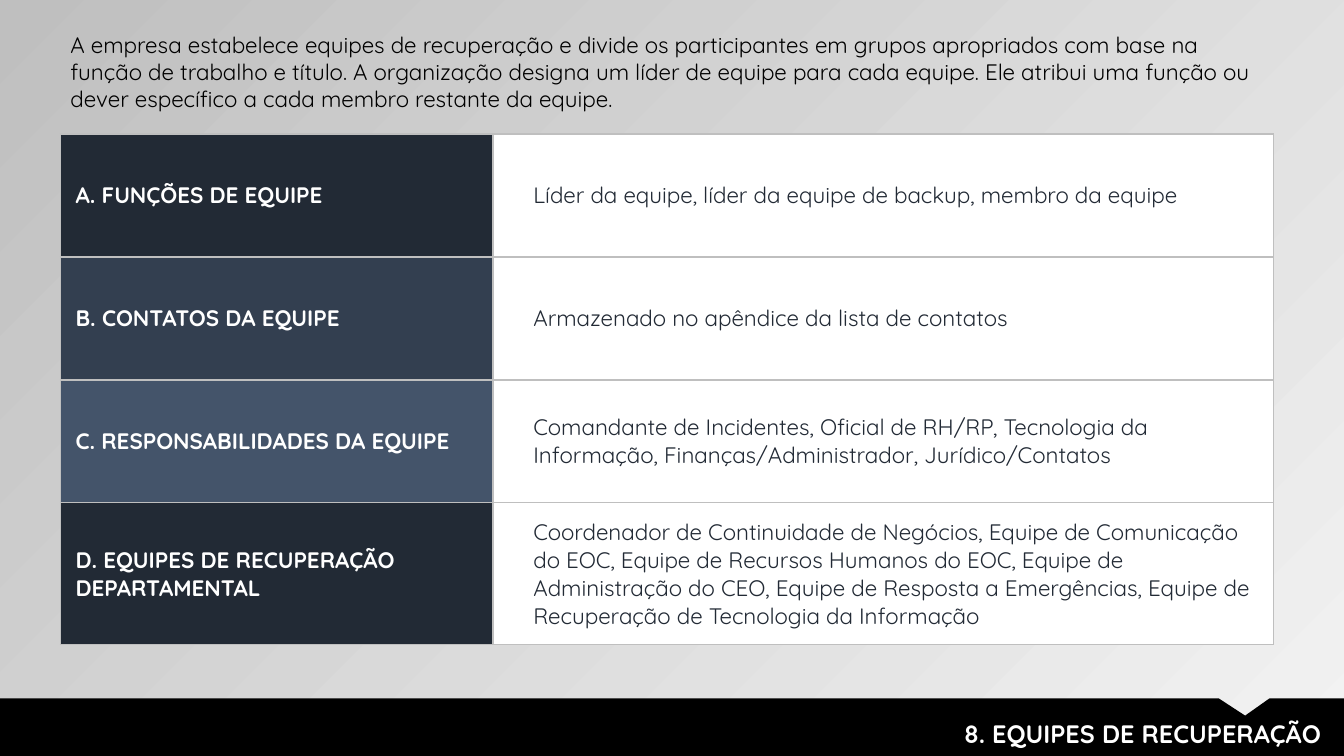
from lxml.etree import SubElement
from pptx import Presentation
from pptx.dml.color import RGBColor
from pptx.enum.text import MSO_ANCHOR, PP_ALIGN
from pptx.oxml.ns import qn
from pptx.util import Inches, Pt

FONT = "Quicksand"
WHITE, BLACK, NAVY, GREY = "FFFFFF", "000000", "222A35", "BFBFBF"
INTRO = (
    "A empresa estabelece equipes de recuperação e divide os participantes em "
    "grupos apropriados com base na função de trabalho e título. A organização "
    "designa um líder de equipe para cada equipe. Ele atribui uma função ou "
    "dever específico a cada membro restante da equipe."
)
TITLE = "8. EQUIPES DE RECUPERAÇÃO"
TEAMS = [
    ("A. FUNÇÕES DE EQUIPE", NAVY,
     "Líder da equipe, líder da equipe de backup, membro da equipe"),
    ("B. CONTATOS DA EQUIPE", "333F50",
     "Armazenado no apêndice da lista de contatos"),
    ("C. RESPONSABILIDADES DA EQUIPE", "44546A",
     "Comandante de Incidentes, Oficial de RH/RP, Tecnologia da Informação, "
     "Finanças/Administrador, Jurídico/Contatos"),
    ("D. EQUIPES DE RECUPERAÇÃO DEPARTAMENTAL", NAVY,
     "Coordenador de Continuidade de Negócios, Equipe de Comunicação do EOC, "
     "Equipe de Recursos Humanos do EOC, Equipe de Administração do CEO, "
     "Equipe de Resposta a Emergências, Equipe de Recuperação de Tecnologia "
     "da Informação"),
]


def color(code):
    return RGBColor.from_string(code)


def set_all(target, values):
    for name, value in values.items():
        setattr(target, name, value)


def write(frame, text, size, code, bold=False, align=PP_ALIGN.LEFT):
    para = frame.paragraphs[0]
    para.alignment = align
    run = para.add_run()
    run.text = text
    set_all(run.font, {"name": FONT, "size": Pt(size), "bold": bold})
    run.font.color.rgb = color(code)


def add_text(slide, box, *args, **kwargs):
    frame = slide.shapes.add_textbox(*map(Inches, box)).text_frame
    frame.word_wrap = True
    write(frame, *args, **kwargs)


def add_edges(cell):
    props = cell._tc.get_or_add_tcPr()
    for side in ("lnL", "lnR", "lnT", "lnB"):
        line = SubElement(props, qn(f"a:{side}"), w=str(Pt(1)))
        fill = SubElement(line, qn("a:solidFill"))
        SubElement(fill, qn("a:srgbClr"), val=GREY)


def fill_cell(cell, text, back, code, left, bold):
    add_edges(cell)
    cell.fill.solid()
    cell.fill.fore_color.rgb = color(back)
    pad = Inches(0.15)
    set_all(cell, {
        "margin_left": Inches(left), "margin_right": pad, "margin_top": pad,
        "margin_bottom": pad, "vertical_anchor": MSO_ANCHOR.MIDDLE,
    })
    write(cell.text_frame, text, 16, code, bold)


def add_teams(slide):
    box = map(Inches, (0.6, 1.33, 12.03, 4.89))
    table = slide.shapes.add_table(len(TEAMS), 2, *box).table
    set_all(table, {"first_row": False, "horz_banding": False})
    for col, width in zip(table.columns, (4.29, 7.74)):
        col.width = Inches(width)
    for row, (label, back, detail) in zip(table.rows, TEAMS):
        row.height = Inches(1.22)
        head, body = row.cells
        fill_cell(head, label, back, WHITE, 0.15, True)
        fill_cell(body, detail, WHITE, NAVY, 0.4, False)


def add_footer(slide):
    """Draw the black band with a notch in its top edge."""
    top, end, base = 6.93, 13.33, 7.5
    points = [(12.09, top), (12.35, 7.1), (12.59, top),
              (end, top), (end, base), (0, base)]
    pen = slide.shapes.build_freeform(0, Inches(top))
    pen.add_line_segments([(Inches(x), Inches(y)) for x, y in points])
    band = pen.convert_to_shape()
    band.shadow.inherit = False
    band.fill.solid()
    band.fill.fore_color.rgb = color(BLACK)
    band.line.fill.background()


def shade(slide):
    fill = slide.background.fill
    fill.gradient()
    fill.gradient_angle = 135
    for stop, code in zip(fill.gradient_stops, ("F2F2F2", GREY)):
        stop.color.rgb = color(code)


def main():
    deck = Presentation()
    set_all(deck, {"slide_width": Inches(13.33), "slide_height": Inches(7.5)})
    slide = deck.slides.add_slide(deck.slide_layouts[6])
    shade(slide)
    add_teams(slide)
    add_footer(slide)
    add_text(slide, (4.14, 7.08, 9.06, 0.4), TITLE, 18, WHITE, True,
             PP_ALIGN.RIGHT)
    add_text(slide, (0.6, 0.26, 12.03, 0.91), INTRO, 16, BLACK)
    deck.save("out.pptx")


if __name__ == "__main__":
    main()
